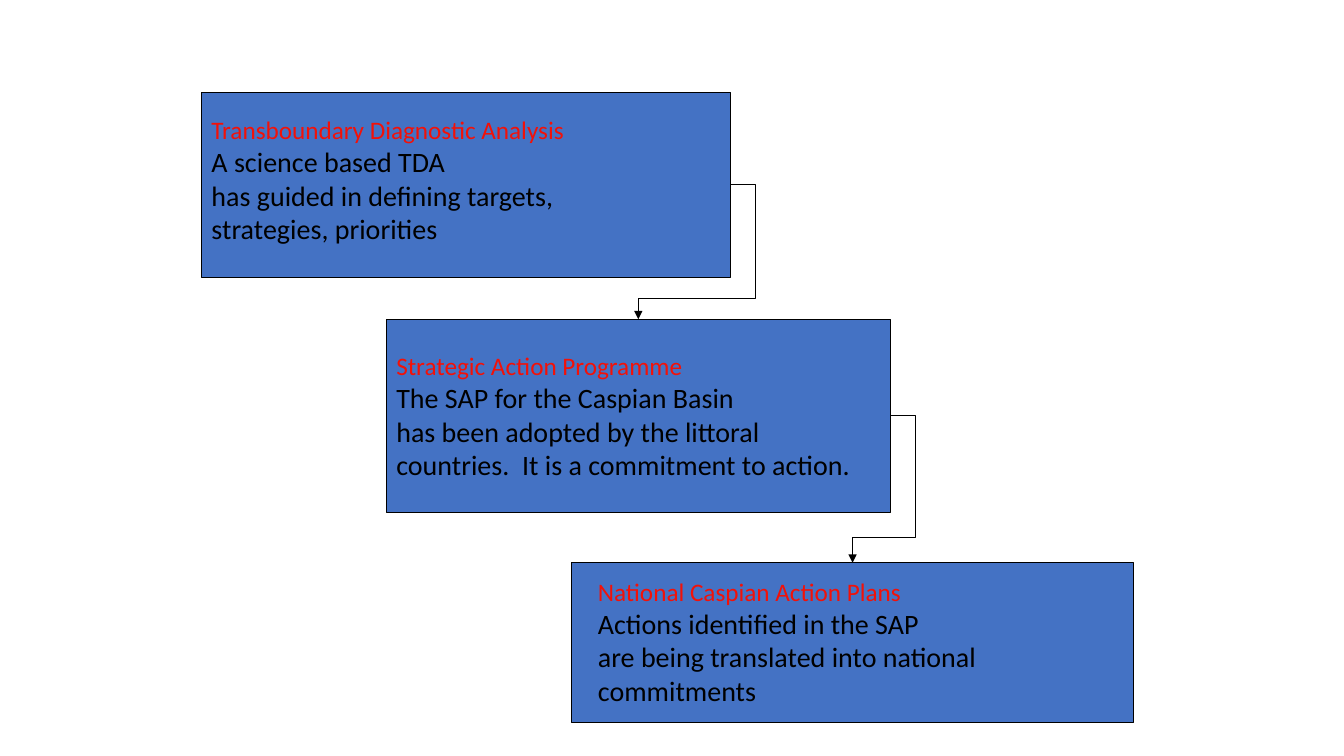
from dataclasses import dataclass

from lxml.etree import SubElement
from pptx import Presentation
from pptx.dml.color import RGBColor
from pptx.enum.shapes import MSO_CONNECTOR, MSO_SHAPE
from pptx.enum.text import MSO_ANCHOR, MSO_AUTO_SIZE, PP_ALIGN
from pptx.oxml.ns import qn
from pptx.util import Pt


@dataclass(frozen=True)
class Theme:
    font: str = "Calibri"
    fill: RGBColor = RGBColor(0x44, 0x72, 0xC4)
    ink: RGBColor = RGBColor(0, 0, 0)
    heading: RGBColor = RGBColor(0xF3, 0x11, 0x08)
    heading_size: int = 18
    body_size: int = 20
    line_width: float = 0.75


class Painter:
    def __init__(self, page, theme):
        self.page = page
        self.theme = theme

    def apply(self, target, formats):
        for name, value in formats.items():
            setattr(target, name, value)

    def outline(self, line):
        line.color.rgb = self.theme.ink
        line.width = Pt(self.theme.line_width)

    def box(self, left, top, width, height):
        box = self.page.shapes.add_shape(
            MSO_SHAPE.RECTANGLE, Pt(left), Pt(top), Pt(width), Pt(height))
        box.shadow.inherit = False
        box.fill.solid()
        box.fill.fore_color.rgb = self.theme.fill
        self.outline(box.line)
        return box

    def fill_text(self, frame, lines, formats):
        self.apply(frame, formats)
        for index, text in enumerate(lines):
            para = frame.add_paragraph() if index else frame.paragraphs[0]
            para.alignment = PP_ALIGN.LEFT
            span = para.add_run()
            span.text = text
            size = self.theme.body_size if index else self.theme.heading_size
            self.apply(span.font, {"name": self.theme.font, "size": Pt(size)})
            span.font.color.rgb = self.theme.ink if index else self.theme.heading

    def label(self, left, top, width, height, lines):
        label = self.page.shapes.add_textbox(Pt(left), Pt(top), Pt(width), Pt(height))
        self.fill_text(label.text_frame, lines, {
            "word_wrap": True, "auto_size": MSO_AUTO_SIZE.SHAPE_TO_FIT_TEXT})

    def step_arrow(self, upper, lower, overhang):
        arrow = self.page.shapes.add_connector(MSO_CONNECTOR.ELBOW, 0, 0, 0, 0)
        arrow.begin_connect(upper, 3)
        arrow.end_connect(lower, 0)
        self.outline(arrow.line)
        gap = lower.top - upper.top - upper.height
        bends = {"adj1": -Pt(overhang) / arrow.width,
                 "adj2": 1 - gap / 2 / arrow.height}
        properties = arrow._element.spPr
        geometry = properties.find(qn("a:prstGeom"))
        geometry.set("prst", "bentConnector4")
        guides = geometry.find(qn("a:avLst"))
        for name, share in bends.items():
            SubElement(guides, qn("a:gd"), name=name, fmla=f"val {round(share * 100000)}")
        SubElement(properties.find(qn("a:ln")), qn("a:tailEnd"), type="triangle")
        SubElement(properties, qn("a:effectLst"))


def main():
    deck = Presentation()
    deck.slide_width, deck.slide_height = Pt(960), Pt(540)
    page = deck.slides.add_slide(deck.slide_layouts[6])
    painter = Painter(page, Theme())

    analysis = painter.box(144, 66, 378, 132)
    painter.label(144, 78, 426, 134.6, [
        "Transboundary Diagnostic Analysis",
        "A science based TDA",
        "has guided in defining targets,",
        "strategies, priorities"])

    programme = painter.box(276, 228, 360, 138)
    painter.fill_text(programme.text_frame, [
        "Strategic Action Programme",
        "The SAP for the Caspian Basin",
        "has been adopted by the littoral",
        "countries.  It is a commitment to action."],
        {"word_wrap": False, "vertical_anchor": MSO_ANCHOR.MIDDLE})

    plans = painter.box(408, 402, 402, 114)
    painter.label(420, 408, 360, 134.6, [
        "National Caspian Action Plans",
        "Actions identified in the SAP",
        "are being translated into national",
        "commitments"])

    for upper, lower in ((analysis, programme), (programme, plans)):
        painter.step_arrow(upper, lower, 18)

    deck.save("out.pptx")


if __name__ == "__main__":
    main()
